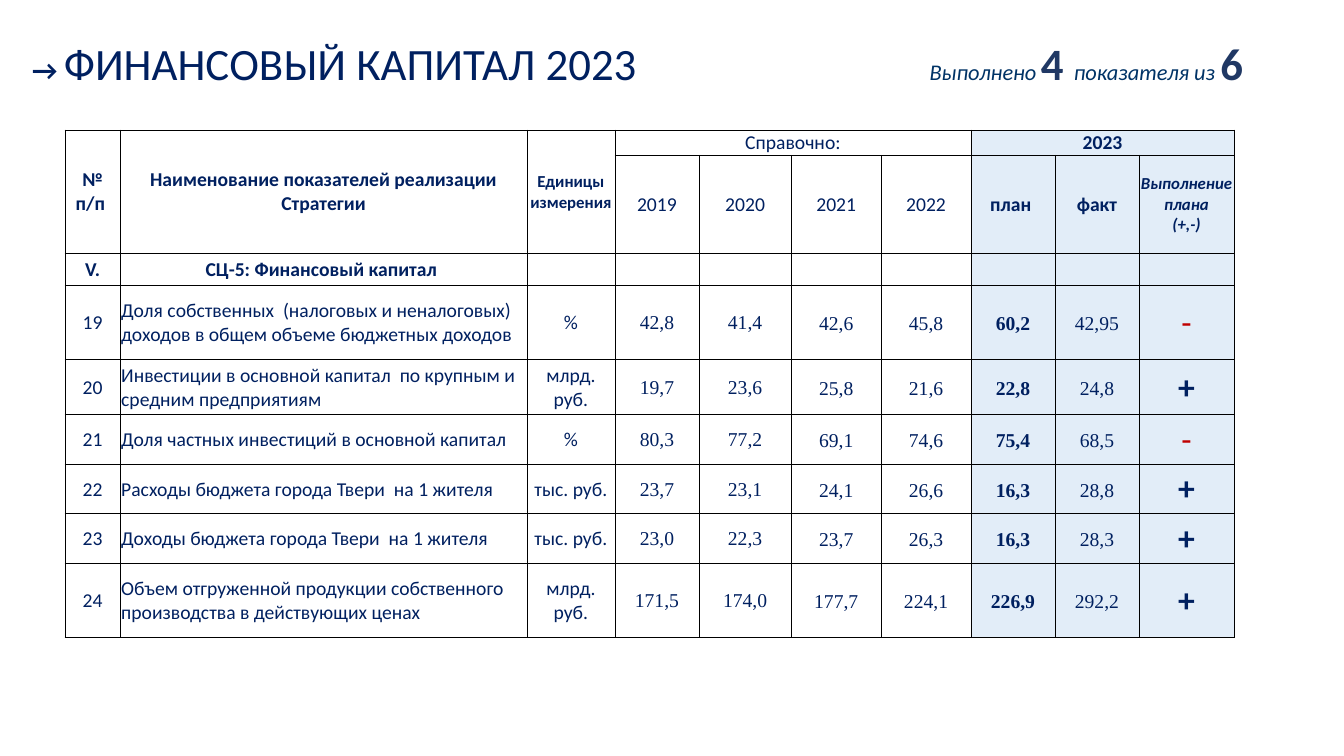
from lxml import etree
from pptx import Presentation
from pptx.dml.color import RGBColor
from pptx.enum.text import MSO_ANCHOR, PP_ALIGN
from pptx.oxml.ns import qn
from pptx.util import Pt

LEFT, CENTER, RIGHT = PP_ALIGN.LEFT, PP_ALIGN.CENTER, PP_ALIGN.RIGHT
MIDDLE = MSO_ANCHOR.MIDDLE
SANS, SERIF = "Calibri", "Times New Roman"
COLORS = {
    "navy": "002060",
    "teal": "003366",
    "count": "203864",
    "minus": "C00000",
    "highlight": "DEEBF7",
    "white": "FFFFFF",
    "border": "000000",
}

COLUMN_WIDTHS = [39.5, 290.5, 62.9, 60, 66, 64.2, 64.2, 60, 60, 68]
ROW_HEIGHTS = [18, 70, 23, 53, 39.4, 35.4, 35.4, 35.4, 53]
FIRST_PLAN_COLUMN = 7
WIDE_MARGIN_COLUMNS = range(5, 9)

# Header: row, column, rows spanned, columns spanned, lines, text style
HEADER_CELLS = [
    (0, 0, 2, 1, ["№ п/п "], {"bold": True}),
    (0, 1, 2, 1, ["Наименование показателей реализации Стратегии"], {"bold": True}),
    (0, 2, 2, 1, ["Единицы измерения"], {"bold": True, "size": 12}),
    (0, 3, 1, 4, ["Справочно:"], {}),
    (0, 7, 1, 3, ["2023"], {"bold": True}),
    (1, 3, 1, 1, ["2019"], {}),
    (1, 4, 1, 1, ["2020"], {}),
    (1, 5, 1, 1, ["2021"], {}),
    (1, 6, 1, 1, ["2022"], {}),
    (1, 7, 1, 1, ["план "], {"bold": True}),
    (1, 8, 1, 1, ["факт"], {"bold": True}),
    (1, 9, 1, 1, ["Выполнение плана", "(+,-)"],
     {"bold": True, "italic": True, "size": 12}),
    (2, 0, 1, 1, ["V."], {"bold": True}),
    (2, 1, 1, 1, ["СЦ-5: Финансовый капитал "], {"bold": True}),
]
INDICATORS = [
    ("19", "Доля собственных  (налоговых и неналоговых) доходов в общем объеме "
     "бюджетных доходов", "%", "42,8", "41,4", "42,6", "45,8", "60,2", "42,95", "-"),
    ("20", "Инвестиции в основной капитал  по крупным и средним предприятиям",
     "млрд. руб.", "19,7", "23,6", "25,8", "21,6", "22,8", "24,8", "+"),
    ("21", "Доля частных инвестиций в основной капитал",
     "%", "80,3", "77,2", "69,1", "74,6", "75,4", "68,5", "-"),
    ("22", "Расходы бюджета города Твери  на 1 жителя",
     "тыс. руб.", "23,7", "23,1", "24,1", "26,6", "16,3", "28,8", "+"),
    ("23", "Доходы бюджета города Твери  на 1 жителя",
     "тыс. руб.", "23,0", "22,3", "23,7", "26,3", "16,3", "28,3", "+"),
    ("24", "Объем отгруженной продукции собственного производства в действующих ценах",
     "млрд. руб.", "171,5", "174,0", "177,7", "224,1", "226,9", "292,2", "+"),
]
FIRST_INDICATOR_ROW = len(ROW_HEIGHTS) - len(INDICATORS)


def add_run(paragraph, text, size=14, color="navy", bold=False, italic=False, font=SANS):
    run = paragraph.add_run()
    run.text = text
    run.font.name = font
    run.font.size = Pt(size)
    run.font.bold = bold
    run.font.italic = italic
    run.font.color.rgb = RGBColor.from_string(COLORS[color])


def add_text_line(slide, box, runs, alignment, wrap):
    text_box = slide.shapes.add_textbox(*[Pt(length) for length in box])
    text_box.text_frame.word_wrap = wrap
    paragraph = text_box.text_frame.paragraphs[0]
    paragraph.alignment = alignment
    for text, style in runs:
        add_run(paragraph, text, **style)


def write_cell(cell, lines, alignment=CENTER, line_spacing=None, **style):
    for index, line in enumerate(lines):
        frame = cell.text_frame
        paragraph = frame.add_paragraph() if index else frame.paragraphs[0]
        paragraph.alignment = alignment
        if line_spacing:
            paragraph.line_spacing = line_spacing
        add_run(paragraph, line, **style)


def set_borders(cell):
    properties = cell._tc.get_or_add_tcPr()
    for position, side in enumerate(("a:lnL", "a:lnR", "a:lnT", "a:lnB")):
        line = etree.Element(qn(side), w=str(Pt(0.5)))
        fill = etree.SubElement(line, qn("a:solidFill"))
        etree.SubElement(fill, qn("a:srgbClr"), val=COLORS["border"])
        properties.insert(position, line)


def format_cell(cell, row, column):
    cell.vertical_anchor = MIDDLE
    is_indicator = row >= FIRST_INDICATOR_ROW
    side = 5 if is_indicator and column in WIDE_MARGIN_COLUMNS else 0.7
    cell.margin_left = cell.margin_right = Pt(side)
    cell.margin_top = Pt(0 if side == 5 else 0.7)
    cell.margin_bottom = Pt(0)
    if column >= FIRST_PLAN_COLUMN:
        cell.fill.solid()
        cell.fill.fore_color.rgb = RGBColor.from_string(COLORS["highlight"])
        color = cell._tc.tcPr.find(".//" + qn("a:srgbClr"))
        etree.SubElement(color, qn("a:alpha"), val="85000")
    elif is_indicator and column in WIDE_MARGIN_COLUMNS:
        cell.fill.solid()
        cell.fill.fore_color.rgb = RGBColor.from_string(COLORS["white"])
    else:
        cell.fill.background()
    set_borders(cell)


def write_indicator(table, row, values):
    for column, value in enumerate(values):
        style = {}
        if column == 1:
            style = {"alignment": LEFT}
        elif column == 9:
            is_met = value == "+"
            style = {"size": 24, "bold": is_met, "color": "navy" if is_met else "minus"}
        elif column >= 3:
            style = {"font": SERIF, "bold": column == FIRST_PLAN_COLUMN}
            if column in WIDE_MARGIN_COLUMNS:
                style["line_spacing"] = 1.15
        write_cell(table.cell(row, column), [value], **style)


def add_indicator_table(slide, left, top):
    table = slide.shapes.add_table(
        len(ROW_HEIGHTS), len(COLUMN_WIDTHS), Pt(left), Pt(top),
        Pt(sum(COLUMN_WIDTHS)), Pt(sum(ROW_HEIGHTS))).table
    table.first_row = False
    table.horz_banding = False
    for column, width in zip(table.columns, COLUMN_WIDTHS):
        column.width = Pt(width)
    for row, height in zip(table.rows, ROW_HEIGHTS):
        row.height = Pt(height)

    for row in range(len(ROW_HEIGHTS)):
        for column in range(len(COLUMN_WIDTHS)):
            format_cell(table.cell(row, column), row, column)

    # Header and section rows
    for row, column, row_span, column_span, lines, style in HEADER_CELLS:
        cell = table.cell(row, column)
        if row_span > 1 or column_span > 1:
            cell.merge(table.cell(row + row_span - 1, column + column_span - 1))
        write_cell(cell, lines, **style)

    # Indicator rows
    for row, values in enumerate(INDICATORS, FIRST_INDICATOR_ROW):
        write_indicator(table, row, values)


def build_capital_slide(presentation):
    slide = presentation.slides.add_slide(presentation.slide_layouts[6])
    # Title
    add_text_line(slide, (13.7, 21.6, 450.7, 46), [
        ("→ ", {"size": 20, "bold": True}),
        ("ФИНАНСОВЫЙ КАПИТАЛ 2023", {"size": 32}),
    ], CENTER, False)
    # Indicators table
    add_indicator_table(slide, 46.4, 92.9)
    # Summary of met targets
    words = {"size": 16, "color": "teal", "italic": True}
    count = {"size": 32, "color": "count", "bold": True}
    add_text_line(slide, (646.6, 21.6, 248.4, 46), [
        ("Выполнено", words),
        (" ", {**words, "size": 14}),
        ("4 ", count),
        ("показателя из ", words),
        ("6", count),
    ], RIGHT, True)


def main():
    presentation = Presentation()
    presentation.slide_width = Pt(960)
    presentation.slide_height = Pt(540)
    build_capital_slide(presentation)
    presentation.save("out.pptx")


if __name__ == "__main__":
    main()
